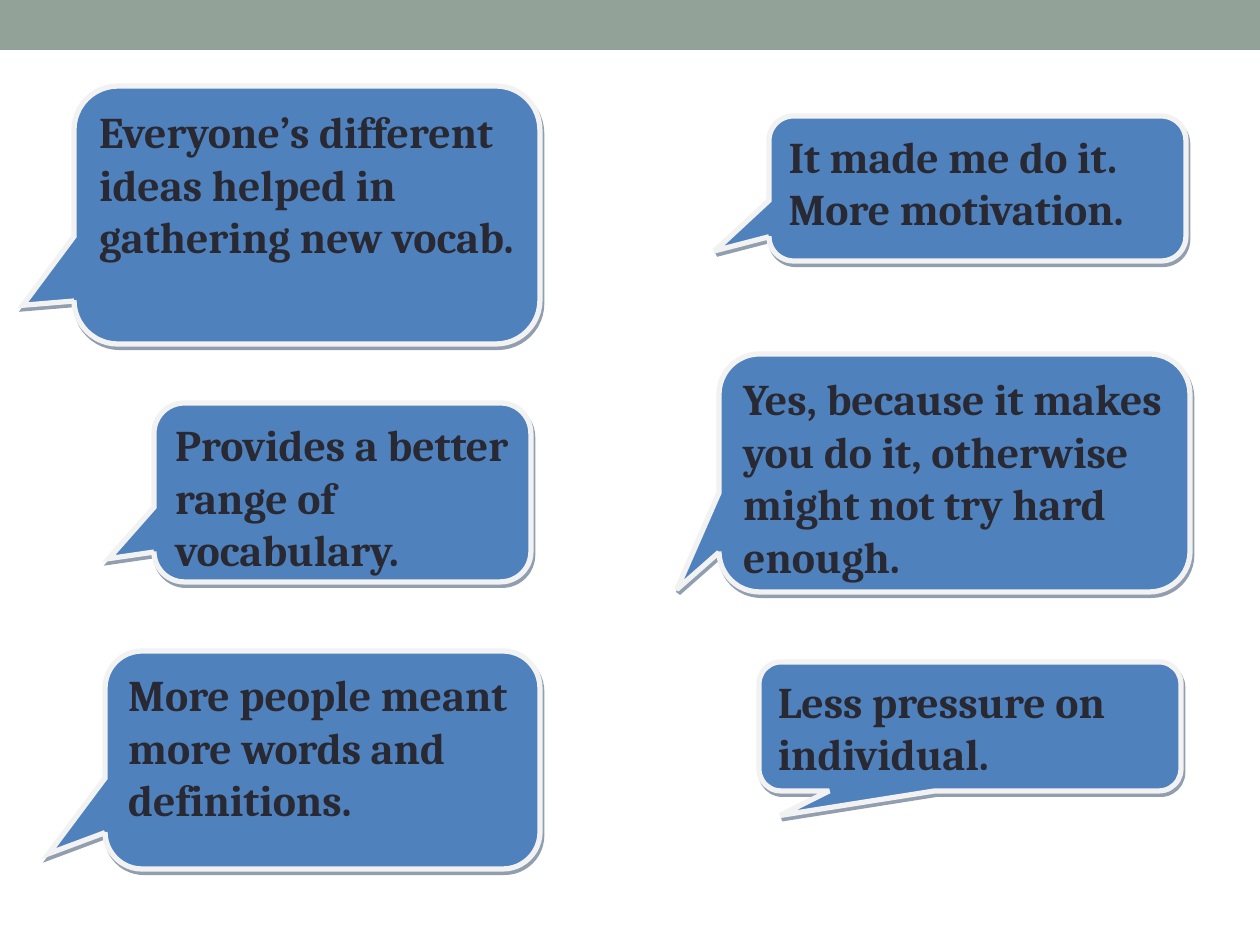
from dataclasses import dataclass

from lxml.etree import SubElement
from pptx import Presentation
from pptx.dml.color import RGBColor
from pptx.enum.shapes import MSO_SHAPE as Preset
from pptx.enum.text import MSO_ANCHOR as Anchor, PP_ALIGN as Align
from pptx.oxml.ns import qn
from pptx.shapes.autoshape import Shape
from pptx.slide import Slide
from pptx.util import Emu, Pt

EMU_PER_PX = 914400 / 126
SLIDE_WIDTH, SLIDE_HEIGHT = 1260, 945
BAR_HEIGHT = 50
CORNER = 0.17


@dataclass(frozen=True)
class Theme:
    bar: str = "93A299"
    bubble: str = "4F81BD"
    outline: str = "F2F2F2"
    shadow: str = "243F60"
    text: str = "292934"
    font: str = "Cambria"
    text_size: int = 25
    outline_width: int = 3
    space_after: int = 10


@dataclass(frozen=True)
class Bubble:
    """A quote; the tail tip is an offset from the centre, in parts of the size."""
    text: str
    left: int
    top: int
    width: int
    height: int
    tail_x: float
    tail_y: float


THEME = Theme()

BUBBLES = [
    Bubble("Everyone’s different ideas helped in gathering new vocab.",
           74, 86, 466, 258, -0.61, 0.35),
    Bubble("More people meant more words and definitions.",
           105, 651, 435, 218, -0.63, 0.43),
    Bubble("Provides a better range of vocabulary.",
           154, 403, 377, 179, -0.62, 0.37),
    Bubble("It made me do it. More motivation.",
           769, 116, 417, 145, -0.63, 0.43),
    Bubble("Yes, because it makes you do it, otherwise might not try hard enough.",
           719, 354, 471, 238, -0.59, 0.49),
    Bubble("Less pressure on individual.",
           759, 662, 422, 129, -0.45, 0.69),
]


def px(length: int) -> Emu:
    return Emu(round(length * EMU_PER_PX))


def rgb(colour: str) -> RGBColor:
    return RGBColor.from_string(colour)


def add_filled_shape(slide: Slide, preset: Preset, left: int, top: int,
                     width: int, height: int, colour: str) -> Shape:
    shape = slide.shapes.add_shape(preset, px(left), px(top), px(width), px(height))
    shape.shadow.inherit = False
    shape.fill.solid()
    shape.fill.fore_color.rgb = rgb(colour)
    shape.line.fill.background()
    return shape


def add_outline(shape: Shape) -> None:
    """Draw a light line with pointed corners, so that the tail stays sharp."""
    shape.line.color.rgb = rgb(THEME.outline)
    shape.line.width = Pt(THEME.outline_width)
    line = shape._element.spPr.find(qn("a:ln"))
    SubElement(line, qn("a:miter"), lim="800000")


def add_shadow(shape: Shape) -> None:
    effects = shape._element.spPr.find(qn("a:effectLst"))
    shadow = SubElement(effects, qn("a:outerShdw"), blurRad="0", dist=str(Pt(2.2)),
                        dir=str(63 * 60000), algn="ctr", rotWithShape="0")
    colour = SubElement(shadow, qn("a:srgbClr"), val=THEME.shadow)
    SubElement(colour, qn("a:alpha"), val="50000")


def add_text(shape: Shape, text: str) -> None:
    frame = shape.text_frame
    frame.word_wrap = True
    frame.vertical_anchor = Anchor.TOP
    paragraph = frame.paragraphs[0]
    paragraph.alignment = Align.LEFT
    paragraph.space_after = Pt(THEME.space_after)
    run = paragraph.add_run()
    run.text = text
    run.font.name = THEME.font
    run.font.size = Pt(THEME.text_size)
    run.font.bold = True
    run.font.color.rgb = rgb(THEME.text)


def add_bubble(slide: Slide, bubble: Bubble) -> None:
    shape = add_filled_shape(slide, Preset.ROUNDED_RECTANGULAR_CALLOUT, bubble.left,
                             bubble.top, bubble.width, bubble.height, THEME.bubble)
    for index, value in enumerate((bubble.tail_x, bubble.tail_y, CORNER)):
        shape.adjustments[index] = value
    add_outline(shape)
    add_shadow(shape)
    add_text(shape, bubble.text)


def main() -> None:
    presentation = Presentation()
    presentation.slide_width = px(SLIDE_WIDTH)
    presentation.slide_height = px(SLIDE_HEIGHT)
    blank_layout = presentation.slide_layouts[6]
    slide = presentation.slides.add_slide(blank_layout)
    add_filled_shape(slide, Preset.RECTANGLE, 0, 0, SLIDE_WIDTH, BAR_HEIGHT, THEME.bar)
    for bubble in BUBBLES:
        add_bubble(slide, bubble)
    presentation.save("out.pptx")


if __name__ == "__main__":
    main()
